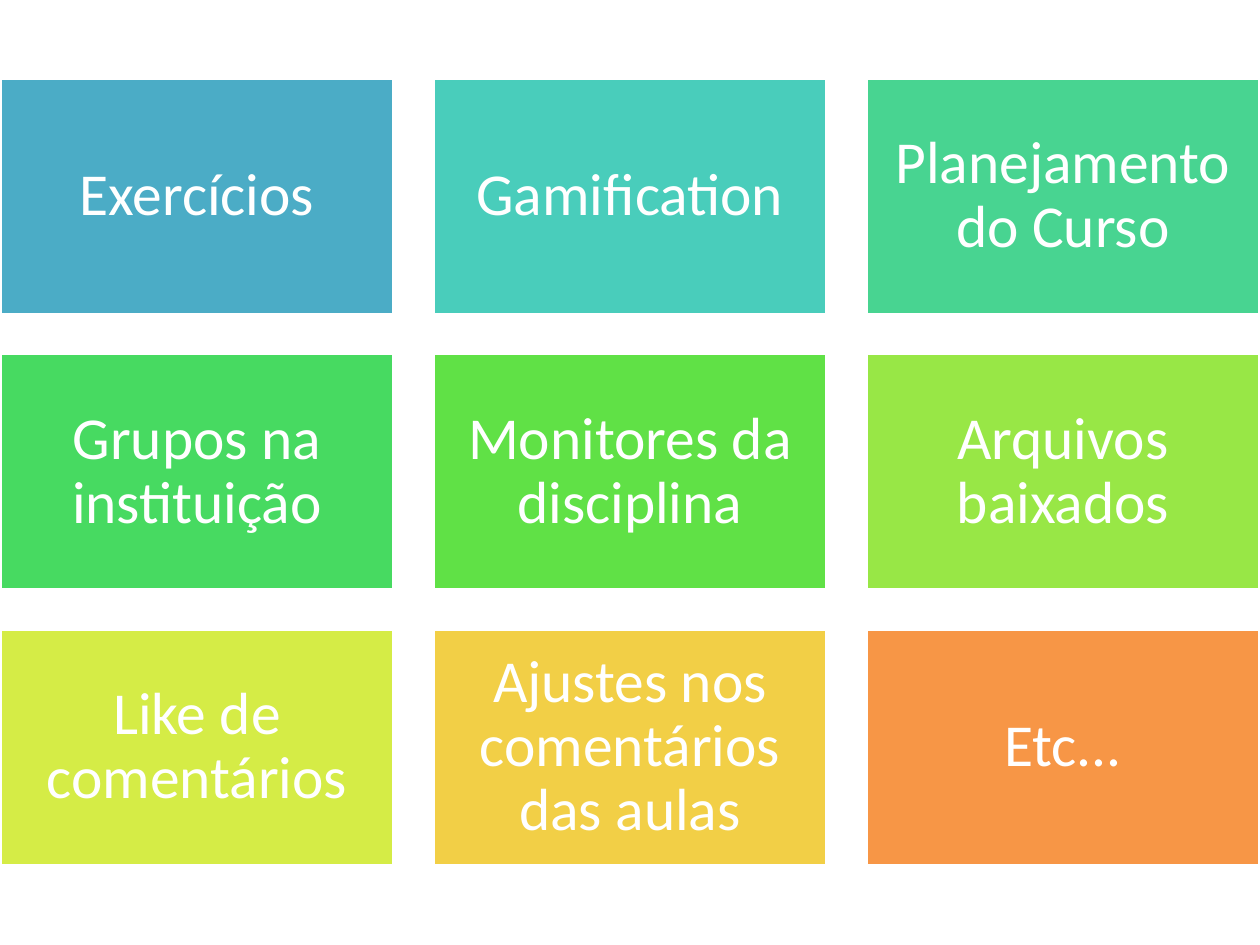
import pptx
import pptx.dml.color
import pptx.enum.shapes
import pptx.enum.text
import pptx.util
from pptx.util import Inches

COLORS = {
    "white": "FFFFFF",
    "blue": "4BACC6",
    "turquoise": "49CDBB",
    "mint": "48D491",
    "emerald": "47DA61",
    "green": "60E146",
    "lime": "98E746",
    "lemon": "D5EC46",
    "gold": "F2CF46",
    "orange": "F79646",
}

TOPICS = [
    ("Exercícios", "blue"),
    ("Gamification", "turquoise"),
    ("Planejamento do Curso", "mint"),
    ("Grupos na instituição", "emerald"),
    ("Monitores da disciplina", "green"),
    ("Arquivos baixados", "lime"),
    ("Like de comentários", "lemon"),
    ("Ajustes nos comentários das aulas", "gold"),
    ("Etc...", "orange"),
]


def color(name):
    return pptx.dml.color.RGBColor.from_string(COLORS[name])


def add_tile(slide, left, top, width, height, text, fill):
    shape = slide.shapes.add_shape(
        pptx.enum.shapes.MSO_SHAPE.RECTANGLE, left, top, width, height
    )
    shape.shadow.inherit = False
    shape.fill.solid()
    shape.fill.fore_color.rgb = color(fill)
    shape.line.color.rgb = color("white")
    shape.line.width = pptx.util.Pt(2)

    text_frame = shape.text_frame
    text_frame.word_wrap = True
    text_frame.vertical_anchor = pptx.enum.text.MSO_ANCHOR.MIDDLE
    text_frame.margin_left = text_frame.margin_right = Inches(0.14)
    text_frame.margin_top = text_frame.margin_bottom = Inches(0.14)
    text_frame.text = text
    paragraph = text_frame.paragraphs[0]
    paragraph.alignment = pptx.enum.text.PP_ALIGN.CENTER
    paragraph.line_spacing = 0.9
    font = paragraph.runs[0].font
    font.name = "Calibri"
    font.size = pptx.util.Pt(34)
    font.color.rgb = color("white")


def add_topic_grid(slide, left, top, width, height, columns=3):
    rows = len(TOPICS) // columns
    gap = Inches(0.31)
    tile_width = (width - gap * (columns - 1)) // columns
    tile_height = (height - gap * (rows - 1)) // rows
    for index, (text, fill) in enumerate(TOPICS):
        row, column = divmod(index, columns)
        add_tile(
            slide,
            left + column * (tile_width + gap),
            top + row * (tile_height + gap),
            tile_width,
            tile_height,
            text,
            fill,
        )


def main():
    presentation = pptx.Presentation()
    presentation.slide_width = Inches(10)
    presentation.slide_height = Inches(7.5)
    slide = presentation.slides.add_slide(presentation.slide_layouts[6])
    add_topic_grid(slide, Inches(0), Inches(0.62), Inches(10), Inches(6.25))
    presentation.save("out.pptx")


if __name__ == "__main__":
    main()
